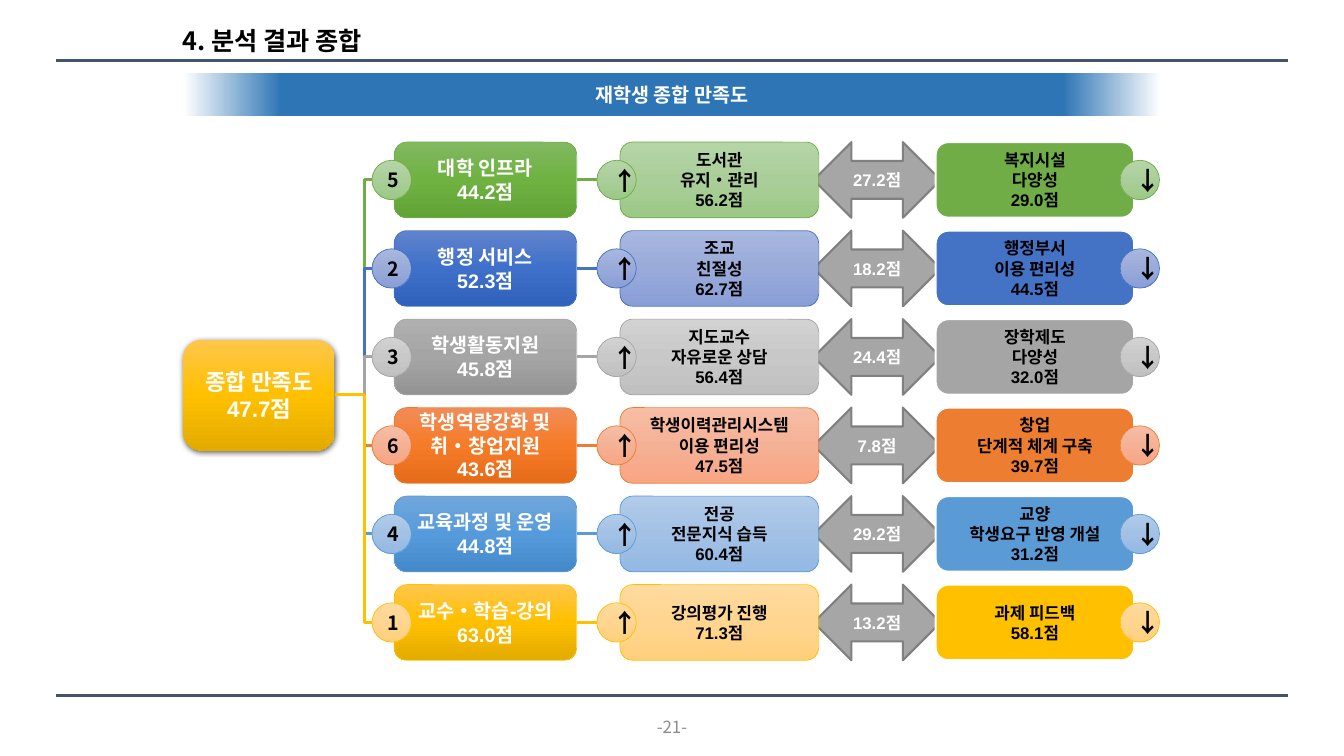
from dataclasses import dataclass

from lxml import etree
from pptx import Presentation
from pptx.dml.color import RGBColor
from pptx.enum import shapes as kinds, text as txt
from pptx.oxml.ns import qn
from pptx.util import Inches, Pt

TITLE = "4. 분석 결과 종합"
BANNER = "재학생 종합 만족도"
OVERALL = "종합 만족도\n47.7점"
PAGE = "-21-"
# hue, rank, area, best item, gap, worst item
ROWS = [
    ("green", "5", "대학 인프라\n44.2점", "도서관\n유지•관리\n56.2점",
     "27.2점", "복지시설\n다양성\n29.0점"),
    ("blue", "2", "행정 서비스\n52.3점", "조교\n친절성\n62.7점",
     "18.2점", "행정부서\n이용 편리성\n44.5점"),
    ("gray", "3", "학생활동지원\n45.8점", "지도교수\n자유로운 상담\n56.4점",
     "24.4점", "장학제도\n다양성\n32.0점"),
    ("orange", "6", "학생역량강화 및\n취•창업지원\n43.6점",
     "학생이력관리시스템 이용 편리성\n47.5점",
     "7.8점", "창업\n단계적 체계 구축\n39.7점"),
    ("sky", "4", "교육과정 및 운영\n44.8점", "전공\n전문지식 습득\n60.4점",
     "29.2점", "교양\n학생요구 반영 개설\n31.2점"),
    ("gold", "1", "교수•학습-강의\n63.0점", "강의평가 진행\n71.3점",
     "13.2점", "과제 피드백\n58.1점"),
]


@dataclass(frozen=True)
class Hue:
    base: str
    strong: tuple
    pale: tuple


class Theme:
    latin, korean = "Arial", "Noto Sans CJK KR"
    black, white = "000000", "FFFFFF"
    rule, page, banner = "44546A", "8C8C8C", "2E75B6"
    gap, gap_edge = "A6A6A6", "808080"
    title_size, overall_size, area_size, item_size, mark_size = 18, 16, 14, 12, 18
    hues = {
        "green": Hue("70AD47", ("81B861", "6FB242", "62A336"), ("B5D5A7", "AACE9A", "9CC987")),
        "blue": Hue("4472C4", ("6183CB", "3E70CA", "3062BB"), ("A8B7DF", "9AABD9", "889ED7")),
        "gray": Hue("A5A5A5", ("AFAFAF", "A5A5A5", "939393"), ("D2D2D2", "C8C8C8", "C0C0C0")),
        "orange": Hue("ED7D31", ("F18C57", "F67B28", "E56C19"), ("F7BDA5", "F5B196", "F8A582")),
        "sky": Hue("5B9BD5", ("71A6DB", "559BDB", "448ACA"), ("B1CBE9", "A3C1E5", "93B9E4")),
        "gold": Hue("FFC000", ("FFC64B", "FFC000", "E3AB00"), ("FFDB9E", "FFD590", "FFD07C")),
    }


BOX, OVAL = kinds.MSO_SHAPE.ROUNDED_RECTANGLE, kinds.MSO_SHAPE.OVAL
ELBOW, STRAIGHT = kinds.MSO_CONNECTOR.ELBOW, kinds.MSO_CONNECTOR.STRAIGHT
FIRST_TOP, LAST_TOP, ROW_HEIGHT = 1.41, 5.8, 0.75
PITCH = (LAST_TOP - FIRST_TOP) / (len(ROWS) - 1)
AREA_LEFT, AREA_WIDTH = 3.91, 1.81
BEST_LEFT, WORST_LEFT, ITEM_WIDTH = 6.15, 9.28, 1.97
GAP_LEFT, GAP_WIDTH = 8.07, 1.26
BADGE = 0.39
RANK_LEFT, UP_LEFT, DOWN_LEFT = 3.69, 5.92, 11.11
OVERALL_AT = (1.82, 3.37, 1.5, 1.1)
OVERALL_RIGHT, OVERALL_MIDDLE = 3.32, 3.91


def rgb(code):
    return RGBColor.from_string(code)


def write(frame, words, size, color, font=Theme.latin, bold=True,
          align=txt.PP_ALIGN.CENTER):
    frame.text = words
    frame.vertical_anchor = txt.MSO_ANCHOR.MIDDLE
    for paragraph in frame.paragraphs:
        paragraph.alignment = align
        for run in paragraph.runs:
            run.font.name, run.font.size, run.font.bold = font, Pt(size), bold
            run.font.color.rgb = rgb(color)
            latin = run.font._element.find(qn("a:latin"))
            east_asian = etree.Element(qn("a:ea"), typeface=Theme.korean)
            latin.addnext(east_asian)


def shade(shape, stops, angle):
    """Fill with (percent, colour) stops; angle is counter-clockwise."""
    shape.fill.gradient()
    shape.fill.gradient_angle = angle
    stop_list = shape._element.spPr.find(".//" + qn("a:gsLst"))
    for stop in list(stop_list):
        stop_list.remove(stop)
    for percent, color in stops:
        stop = etree.SubElement(stop_list, qn("a:gs"), pos=str(percent * 1000))
        etree.SubElement(stop, qn("a:srgbClr"), val=color)


def add_block(slide, kind, at, fill, edge=None, edge_width=0.5):
    """A plain fill is one colour; a tuple of three runs from top to bottom."""
    shape = slide.shapes.add_shape(kind, *map(Inches, at))
    shape.shadow.inherit = False
    if isinstance(fill, tuple):
        shade(shape, zip((0, 50, 100), fill), 270)
    else:
        shape.fill.solid()
        shape.fill.fore_color.rgb = rgb(fill)
    if edge:
        shape.line.color.rgb = rgb(edge)
        shape.line.width = Pt(edge_width)
    else:
        shape.line.fill.background()
    return shape


def add_line(slide, kind, start, end, color, width=2.25):
    line = slide.shapes.add_connector(kind, *map(Inches, start + end))
    line.line.color.rgb = rgb(color)
    line.line.width = Pt(width)
    etree.SubElement(line._element.spPr, qn("a:effectLst"))


def add_badge(slide, left, middle, mark, size, hue):
    badge = add_block(slide, OVAL, (left, middle - BADGE / 2, BADGE, BADGE),
                      hue.pale, hue.base)
    write(badge.text_frame, mark, size, Theme.black, Theme.korean)


def add_frame(slide):
    for y in (0.6, 6.9):
        add_line(slide, STRAIGHT, (0.56, y), (12.77, y), Theme.rule, 2)
    page = slide.shapes.add_textbox(*map(Inches, (6.39, 7.06, 0.55, 0.3)))
    page.text_frame.word_wrap = False
    write(page.text_frame, PAGE, Theme.item_size, Theme.page, Theme.korean, False)

    title = slide.shapes.title
    title.left, title.top, title.width, title.height = map(
        Inches, (1.71, 0.23, 4.84, 0.37))
    write(title.text_frame, TITLE, Theme.title_size, Theme.black, Theme.korean,
          align=txt.PP_ALIGN.LEFT)
    title.text_frame.paragraphs[0].line_spacing = 0.9

    banner = add_block(slide, kinds.MSO_SHAPE.RECTANGLE,
                       (1.82, 0.72, 9.69, 0.43), Theme.banner)
    shade(banner, [(0, Theme.white), (10, Theme.banner),
                   (90, Theme.banner), (100, Theme.white)], 0)
    write(banner.text_frame, BANNER, Theme.area_size, Theme.white)


def add_overall(slide):
    overall = add_block(slide, BOX, OVERALL_AT, Theme.hues["gold"].strong)
    write(overall.text_frame, OVERALL, Theme.overall_size, Theme.white)
    effects = overall._element.spPr.find(qn("a:effectLst"))
    shadow = etree.SubElement(effects, qn("a:outerShdw"), blurRad=str(Pt(4.5)),
                              dist=str(Pt(1.5)), dir="5400000", rotWithShape="0")
    shade_color = etree.SubElement(shadow, qn("a:srgbClr"), val=Theme.black)
    etree.SubElement(shade_color, qn("a:alpha"), val="63000")


def add_row(slide, top, hue, rank, area, best, gap, worst):
    middle = top + ROW_HEIGHT / 2
    blocks = [
        (kinds.MSO_SHAPE.LEFT_RIGHT_ARROW, GAP_LEFT, GAP_WIDTH, Theme.gap,
         Theme.gap_edge, 1.5, gap, Theme.item_size, Theme.white, None),
        (BOX, AREA_LEFT, AREA_WIDTH, hue.strong, hue.base, 0.5,
         area, Theme.area_size, Theme.white, (RANK_LEFT, rank, Theme.area_size)),
        (BOX, BEST_LEFT, ITEM_WIDTH, hue.pale, hue.base, 0.5,
         best, Theme.item_size, Theme.black, (UP_LEFT, "↑", Theme.mark_size)),
        (BOX, WORST_LEFT, ITEM_WIDTH, hue.base, Theme.white, 1.5,
         worst, Theme.item_size, Theme.black, (DOWN_LEFT, "↓", Theme.mark_size)),
    ]
    add_line(slide, STRAIGHT, (AREA_LEFT + AREA_WIDTH, middle),
             (BEST_LEFT, middle), hue.base)
    for kind, left, width, fill, edge, edge_width, words, size, color, badge in blocks:
        block = add_block(slide, kind, (left, top, width, ROW_HEIGHT),
                          fill, edge, edge_width)
        write(block.text_frame, words, size, color)
        if badge:
            mark_left, mark, mark_size = badge
            add_badge(slide, mark_left, middle, mark, mark_size, hue)


def main():
    deck = Presentation()
    deck.slide_width, deck.slide_height = Inches(13.33), Inches(7.5)
    slide = deck.slides.add_slide(deck.slide_layouts[5])
    add_frame(slide)
    add_overall(slide)
    tops = [FIRST_TOP + PITCH * i for i in range(len(ROWS))]
    for top, row in zip(tops, ROWS):
        add_line(slide, ELBOW, (AREA_LEFT, top + ROW_HEIGHT / 2),
                 (OVERALL_RIGHT, OVERALL_MIDDLE), Theme.hues[row[0]].base)
    for top, (hue, *words) in zip(tops, ROWS):
        add_row(slide, top, Theme.hues[hue], *words)
    deck.save("out.pptx")


if __name__ == "__main__":
    main()
